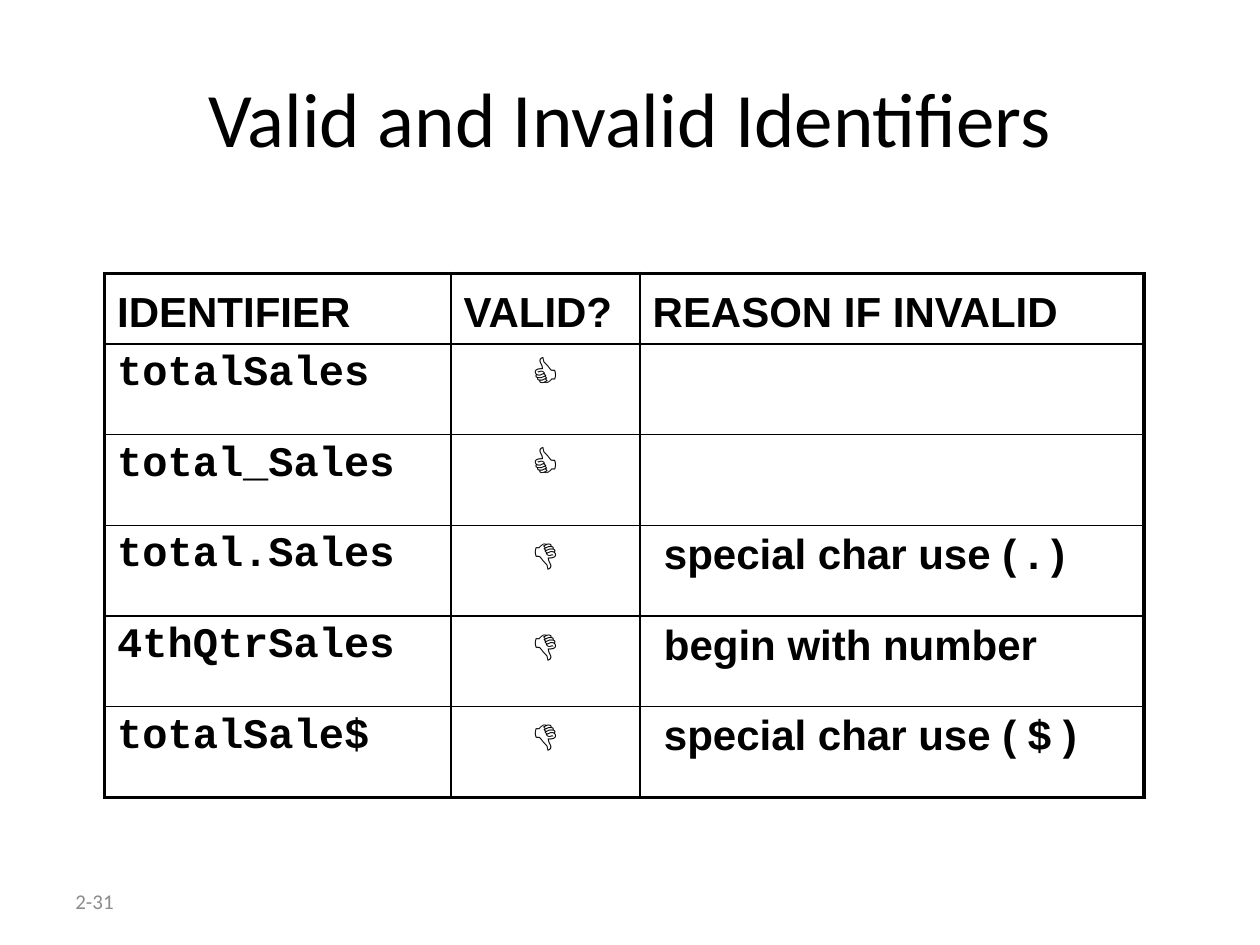
from lxml import etree
from pptx import Presentation, util as u
from pptx.dml.color import RGBColor
from pptx.enum import text
from pptx.oxml import ns

BLACK = RGBColor(0, 0, 0)
GRAY = RGBColor(0x8C, 0x8C, 0x8C)
THICK, THIN = 2.25, 1

HEADER = ("IDENTIFIER", "VALID?", "REASON IF INVALID")
IDENTIFIERS = [
    ("totalSales", "👍", ""),
    ("total_Sales", "👍", ""),
    ("total.Sales", "👎", "special char use ( . )"),
    ("4thQtrSales", "👎", "begin with number"),
    ("totalSale$", "👎", "special char use ( $ )"),
]
COLUMN_WIDTHS = (2.75, 1.5, 4)
HEADER_HEIGHT, ROW_HEIGHT = 0.56, 0.72


def style(para, font_name, size, color, bold=False):
    para.font.name = font_name
    para.font.size = u.Pt(size)
    para.font.color.rgb = color
    para.font.bold = bold


def set_borders(cell, widths):
    """Draw black cell borders, widths in points as left, right, top, bottom."""
    properties = cell._tc.get_or_add_tcPr()
    for position, (side, width) in enumerate(zip("LRTB", widths)):
        line = etree.Element(ns.qn(f"a:ln{side}"), w=str(u.Pt(width)))
        fill = etree.SubElement(line, ns.qn("a:solidFill"))
        etree.SubElement(fill, ns.qn("a:srgbClr"), val=str(BLACK))
        properties.insert(position, line)


deck = Presentation()
deck.slide_width, deck.slide_height = u.Inches(10), u.Inches(7.5)
page = deck.slides.add_slide(deck.slide_layouts[5])

title = page.shapes.title
title.left, title.top = u.Inches(0.5), u.Inches(0.3)
title.width, title.height = u.Inches(9), u.Inches(1.25)
title.text_frame.text = "Valid and Invalid Identifiers"
title.text_frame.vertical_anchor = text.MSO_ANCHOR.MIDDLE
title_para = title.text_frame.paragraphs[0]
title_para.alignment = text.PP_ALIGN.CENTER
style(title_para, "Calibri", 44, BLACK)

rows = [HEADER] + IDENTIFIERS
heights = [HEADER_HEIGHT] + [ROW_HEIGHT] * len(IDENTIFIERS)
table = page.shapes.add_table(
    len(rows), len(COLUMN_WIDTHS), u.Inches(0.83), u.Inches(2.17),
    u.Inches(sum(COLUMN_WIDTHS)), u.Inches(sum(heights))).table
table.horz_banding = False
for column, width in zip(table.columns, COLUMN_WIDTHS):
    column.width = u.Inches(width)

last_row, last_column = len(rows) - 1, len(COLUMN_WIDTHS) - 1
for r, (row, height) in enumerate(zip(rows, heights)):
    table.rows[r].height = u.Inches(height)
    for c, wording in enumerate(row):
        cell = table.cell(r, c)
        cell.fill.background()
        at_edge = (c == 0, c == last_column, r == 0, r == last_row)
        set_borders(cell, [THICK if edge else THIN for edge in at_edge])
        cell.text = wording
        para = cell.text_frame.paragraphs[0]
        is_code = r > 0 and c == 0
        style(para, "Courier New" if is_code else "Arial", 24, BLACK, bold=True)
        if r == 0:
            para.line_spacing = 1.2
        elif c == 1:
            para.alignment = text.PP_ALIGN.CENTER
        elif c == last_column:
            cell.margin_left = u.Inches(0.19)

number_box = page.shapes.add_textbox(
    u.Inches(0.5), u.Inches(6.95), u.Inches(2.33), u.Inches(0.4))
number_box.text_frame.word_wrap = True
number_box.text_frame.vertical_anchor = text.MSO_ANCHOR.MIDDLE
number_box.text_frame.text = "2-31"
style(number_box.text_frame.paragraphs[0], "Calibri", 12, GRAY)

deck.save("out.pptx")
